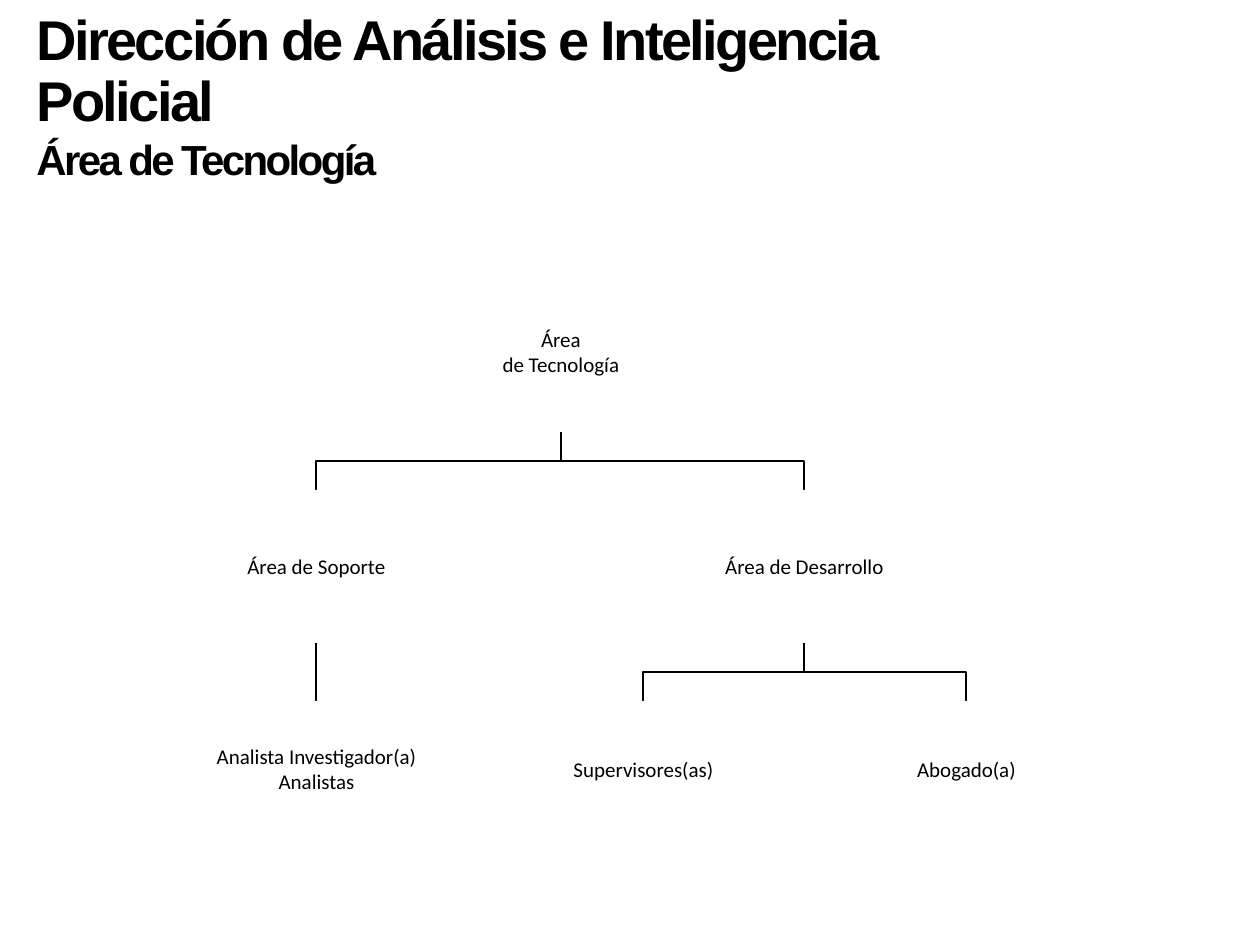
from dataclasses import dataclass
from lxml.etree import SubElement
from pptx import Presentation
from pptx.dml.color import RGBColor
from pptx.enum.shapes import MSO_CONNECTOR, MSO_SHAPE
from pptx.enum.text import MSO_ANCHOR, PP_ALIGN
from pptx.oxml.ns import qn
from pptx.util import Emu, Pt


@dataclass(frozen=True)
class Theme:
    ink: RGBColor = RGBColor(0, 0, 0)
    paper: RGBColor = RGBColor(255, 255, 255)
    title_font: str = "Arial"
    chart_font: str = "Calibri"
    title_size: int = 32
    subtitle_size: int = 24
    unit_size: int = 12
    line_width: int = 1


THEME = Theme()
SCALE = 914400 / 126

HEADING = [
    ("Dirección de Análisis e Inteligencia Policial", THEME.title_size, 0.9),
    ("Área de Tecnología", THEME.subtitle_size, None),
]
HEADING_AREA = (24, 6, 940, 185)

UNITS = {
    "tecnología": (["Área", "de Tecnología"], (335, 272, 452, 160), None),
    "soporte": (["Área de Soporte"], (164, 490, 305, 153), "tecnología"),
    "desarrollo": (["Área de Desarrollo"], (652, 490, 305, 153), "tecnología"),
    "analistas": (["Analista Investigador(a)", "Analistas"], (180, 701, 273, 136), "soporte"),
    "supervisores": (["Supervisores(as)"], (511, 701, 265, 136), "desarrollo"),
    "abogado": (["Abogado(a)"], (834, 701, 265, 136), "desarrollo"),
}


def px(value):
    return Emu(round(value * SCALE))


def add_span(para, text, font_name, size, bold=False):
    span = para.add_run()
    span.text = text
    span.font.name = font_name
    span.font.size = Pt(size)
    span.font.bold = bold
    span.font.color.rgb = THEME.ink
    return span


def get_para(frame, index):
    return frame.add_paragraph() if index else frame.paragraphs[0]


def add_heading(page):
    frame = page.shapes.add_textbox(*map(px, HEADING_AREA)).text_frame
    frame.word_wrap = True
    for index, (text, size, spacing) in enumerate(HEADING):
        para = get_para(frame, index)
        para.line_spacing = spacing
        span = add_span(para, text, THEME.title_font, size, bold=True)
        span.font._element.set("spc", "-150")


def add_link(page, parent, child):
    left, top, width, height = parent
    start_x, start_y = left + width // 2, top + height
    end_x, end_y = child[0] + child[2] // 2, child[1]
    if start_x == end_x:
        link = page.shapes.add_connector(
            MSO_CONNECTOR.STRAIGHT, *map(px, (start_x, start_y, end_x, end_y)))
        SubElement(link._element.spPr, qn("a:effectLst"))
    else:
        middle = (start_y + end_y) // 2
        outline = page.shapes.build_freeform(start_x, start_y, scale=SCALE)
        outline.add_line_segments(
            [(start_x, middle), (end_x, middle), (end_x, end_y)], close=False)
        link = outline.convert_to_shape()
        link.shadow.inherit = False
        link.fill.background()
    link.line.color.rgb = THEME.ink
    link.line.width = Pt(THEME.line_width)


def add_unit(page, lines, area):
    box = page.shapes.add_shape(MSO_SHAPE.RECTANGLE, *map(px, area))
    box.shadow.inherit = False
    box.fill.solid()
    box.fill.fore_color.rgb = THEME.paper
    box.line.fill.background()
    frame = box.text_frame
    frame.word_wrap = True
    frame.vertical_anchor = MSO_ANCHOR.MIDDLE
    frame.margin_left = frame.margin_right = px(1)
    frame.margin_top = frame.margin_bottom = px(1)
    for index, text in enumerate(lines):
        para = get_para(frame, index)
        para.alignment = PP_ALIGN.CENTER
        add_span(para, text, THEME.chart_font, THEME.unit_size)


def main():
    deck = Presentation()
    deck.slide_width, deck.slide_height = px(1260), px(945)
    page = deck.slides.add_slide(deck.slide_layouts[6])
    add_heading(page)
    for _, area, parent in UNITS.values():
        if parent:
            add_link(page, UNITS[parent][1], area)
    for lines, area, _ in UNITS.values():
        add_unit(page, lines, area)
    deck.save("out.pptx")


if __name__ == "__main__":
    main()
